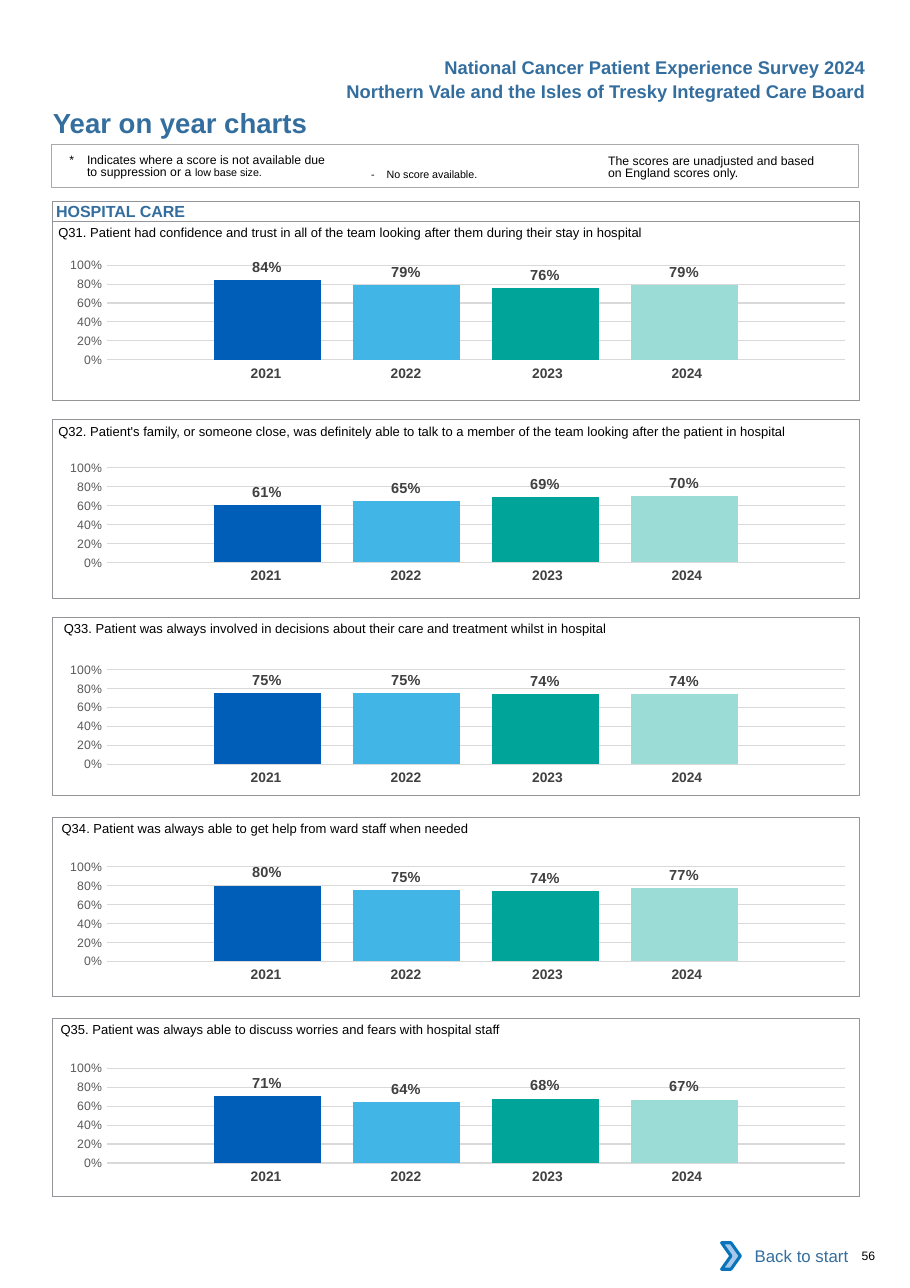
from lxml.etree import SubElement
from pptx import Presentation
from pptx.chart.data import CategoryChartData
from pptx.dml.color import RGBColor
from pptx.enum.chart import XL_CHART_TYPE as ChartType, XL_LABEL_POSITION as LabelPosition
from pptx.enum.chart import XL_TICK_MARK as TickMark
from pptx.enum.shapes import MSO_SHAPE as Shape
from pptx.enum.text import MSO_ANCHOR as Anchor, MSO_AUTO_SIZE as AutoSize, PP_ALIGN as Align
from pptx.oxml.ns import qn
from pptx.util import Inches, Pt

BLACK = RGBColor(0x00, 0x00, 0x00)
WHITE = RGBColor(0xFF, 0xFF, 0xFF)
HEADING = RGBColor(0x33, 0x6E, 0x9F)
FRAME = RGBColor(0x93, 0x95, 0x98)
NOTE_FRAME = RGBColor(0xA9, 0xAA, 0xAD)
YEAR_TEXT = RGBColor(0x41, 0x40, 0x42)
LABEL_TEXT = RGBColor(0x40, 0x40, 0x40)
AXIS_TEXT = RGBColor(0x59, 0x59, 0x59)
GRID = RGBColor(0xD9, 0xD9, 0xD9)
ARROW_FILL = RGBColor(0xA8, 0xC7, 0xE9)
ARROW_LINE = RGBColor(0x0A, 0x74, 0xBB)
YEAR_COLORS = {
    "2021": RGBColor(0x00, 0x5E, 0xB8),
    "2022": RGBColor(0x41, 0xB6, 0xE6),
    "2023": RGBColor(0x00, 0xA4, 0x99),
    "2024": RGBColor(0x9C, 0xDC, 0xD7),
}
YEAR_WIDTHS = (1.27, 1.27, 1.34, 1.27)
YEAR_RIGHT_INSETS = (0, 0, 0.04, 0.12)
PLOT_AREA = {"x": 0.079, "y": 0.145, "w": 0.915, "h": 0.666}
NO_TABLE_STYLE = "{2D5ABB26-0587-4C30-8999-92F81FD0307C}"

QUESTIONS = [
    (2.01, 2.22, 0.53, "Q31. Patient had confidence and trust in all of the team looking after them "
     "during their stay in hospital", (0.84, 0.79, 0.76, 0.79)),
    (3.81, 4.06, 0.53, "Q32. Patient's family, or someone close, was definitely able to talk to a member "
     "of the team looking after the patient in hospital", (0.61, 0.65, 0.69, 0.70)),
    (5.60, 5.89, 0.58, "Q33. Patient was always involved in decisions about their care and treatment "
     "whilst in hospital", (0.75, 0.75, 0.74, 0.74)),
    (7.42, 7.68, 0.56, "Q34. Patient was always able to get help from ward staff when needed",
     (0.80, 0.75, 0.74, 0.77)),
    (9.24, 9.51, 0.55, "Q35. Patient was always able to discuss worries and fears with hospital staff",
     (0.71, 0.64, 0.68, 0.67)),
]


def style_font(font, size, color, bold=False):
    font.name = "Arial"
    font.size = Pt(size)
    font.bold = bold
    font.color.rgb = color


def fill_frame(frame, text, size, color, bold=False, align=Align.LEFT, inset=0.0, anchor=Anchor.TOP):
    frame.text = text
    frame.word_wrap = True
    frame.auto_size = AutoSize.NONE
    frame.vertical_anchor = anchor
    frame.margin_left = frame.margin_right = Inches(inset)
    frame.margin_top = frame.margin_bottom = 0
    paragraph = frame.paragraphs[0]
    paragraph.alignment = align
    for run in paragraph.runs:
        style_font(run.font, size, color, bold)
    return paragraph


def add_text(slide, left, top, width, height, text, size, color=BLACK, bold=False, align=Align.LEFT):
    box = slide.shapes.add_textbox(Inches(left), Inches(top), Inches(width), Inches(height))
    return fill_frame(box.text_frame, text, size, color, bold, align)


def add_box(slide, kind, left, top, width, height, fill=None, line=None, weight=0.5):
    box = slide.shapes.add_shape(kind, Inches(left), Inches(top), Inches(width), Inches(height))
    box.shadow.inherit = False
    if fill is None:
        box.fill.background()
    else:
        box.fill.solid()
        box.fill.fore_color.rgb = fill
    if line is None:
        box.line.fill.background()
    else:
        box.line.color.rgb = line
        box.line.width = Pt(weight)
    return box


def hang(paragraph, indent):
    properties = paragraph._p.get_or_add_pPr()
    properties.set("marL", str(Inches(indent)))
    properties.set("indent", str(-Inches(indent)))


def fix_plot_area(chart):
    plot_area = chart._chartSpace.chart.plotArea
    layout = plot_area.find(qn("c:layout"))
    if layout is None:
        layout = plot_area.makeelement(qn("c:layout"))
        plot_area.insert(0, layout)
    manual = SubElement(layout, qn("c:manualLayout"))
    settings = {"layoutTarget": "inner", "xMode": "edge", "yMode": "edge", **PLOT_AREA}
    for tag, value in settings.items():
        SubElement(manual, qn(f"c:{tag}")).set("val", str(value))


def add_score_chart(slide, top, scores):
    data = CategoryChartData(number_format="0%")
    data.categories = ["1"]
    for year, score in zip(YEAR_COLORS, scores):
        data.add_series(year, [score])
    chart = slide.shapes.add_chart(ChartType.COLUMN_CLUSTERED, Inches(0.39), Inches(top),
                                   Inches(7.32), Inches(1.29), data).chart
    chart.has_legend = chart.has_title = False
    chart.font.name = "Calibri"
    chart.font.size = Pt(10)
    chart.category_axis.visible = False
    fix_plot_area(chart)

    axis = chart.value_axis
    axis.minimum_scale, axis.maximum_scale, axis.major_unit = 0, 1, 0.2
    axis.major_tick_mark = axis.minor_tick_mark = TickMark.NONE
    axis.format.line.fill.background()
    axis.major_gridlines.format.line.color.rgb = GRID
    axis.major_gridlines.format.line.width = Pt(0.75)
    axis.tick_labels.number_format = "0%"
    axis.tick_labels.number_format_is_linked = False
    style_font(axis.tick_labels.font, 8, AXIS_TEXT)

    plot = chart.plots[0]
    plot.gap_width, plot.overlap, plot.vary_by_categories = 200, -30, False
    for series, color in zip(plot.series, YEAR_COLORS.values()):
        series.format.fill.solid()
        series.format.fill.fore_color.rgb = color
        labels = series.data_labels
        labels.show_value = True
        labels.position = LabelPosition.OUTSIDE_END
        labels.number_format = "0%"
        labels.number_format_is_linked = False
        style_font(labels.font, 9.5, LABEL_TEXT, True)


def add_year_table(slide, top):
    table = slide.shapes.add_table(1, len(YEAR_COLORS), Inches(1.73), Inches(top),
                                   Inches(sum(YEAR_WIDTHS)), Inches(0.27)).table
    table.first_row = table.horz_banding = False
    table._tbl.tblPr.find(qn("a:tableStyleId")).text = NO_TABLE_STYLE
    for column, (year, width, inset) in enumerate(zip(YEAR_COLORS, YEAR_WIDTHS, YEAR_RIGHT_INSETS)):
        table.columns[column].width = Inches(width)
        cell = table.cell(0, column)
        cell.fill.background()
        cell.margin_left, cell.margin_right = Inches(0.1), Inches(inset)
        cell.text = year
        paragraph = cell.text_frame.paragraphs[0]
        paragraph.alignment = Align.CENTER
        style_font(paragraph.runs[0].font, 9, YEAR_TEXT, True)


def add_question(slide, frame_top, chart_top, left, question, scores):
    add_year_table(slide, chart_top + 1.05)
    add_score_chart(slide, chart_top, scores)
    add_box(slide, Shape.RECTANGLE, 0.48, frame_top, 7.32, 1.62, line=FRAME)
    add_text(slide, left, frame_top + 0.03, 7.2, 0.15, question, 8.5)


def add_notes_panel(slide):
    add_box(slide, Shape.RECTANGLE, 0.47, 1.31, 7.32, 0.39, line=NOTE_FRAME, weight=0.75)
    suppression = add_text(slide, 0.63, 1.4, 2.35, 0.25,
                           "*\tIndicates where a score is not available due to suppression or a ", 8)
    hang(suppression, 0.16)
    low_base = suppression.add_run()
    low_base.text = "low base size."
    style_font(low_base.font, 7, BLACK)
    unadjusted = add_text(slide, 5.52, 1.41, 1.95, 0.25,
                          "The scores are unadjusted and based on England scores only.", 8)
    for paragraph in (suppression, unadjusted):
        paragraph.line_spacing = Pt(8.1)
    hang(add_text(slide, 3.37, 1.52, 1.5, 0.13, "-\tNo score available.", 7), 0.14)


def main():
    deck = Presentation()
    deck.slide_width, deck.slide_height = Inches(8.26), Inches(11.69)
    slide = deck.slides.add_slide(deck.slide_layouts[5])

    title = slide.shapes.title
    title.left, title.top, title.width, title.height = Inches(0.48), Inches(0.96), Inches(4.5), Inches(0.3)
    fill_frame(title.text_frame, "Year on year charts", 18, HEADING, True)
    headers = ("National Cancer Patient Experience Survey 2024",
               "Northern Vale and the Isles of Tresky Integrated Care Board")
    for row, header in enumerate(headers):
        add_text(slide, 2.66, 0.51 + 0.22 * row, 5.2, 0.2, header, 12, HEADING, True, Align.RIGHT)

    add_notes_panel(slide)
    section = add_box(slide, Shape.RECTANGLE, 0.48, 1.83, 7.32, 0.18, line=FRAME)
    fill_frame(section.text_frame, "HOSPITAL CARE", 10.5, HEADING, True, inset=0.03, anchor=Anchor.MIDDLE)
    for question in QUESTIONS:
        add_question(slide, *question)

    back = add_box(slide, Shape.RECTANGLE, 6.62, 11.19, 1.18, 0.42, fill=WHITE)
    fill_frame(back.text_frame, "Back to start", 11, HEADING, align=Align.RIGHT, inset=0.1, anchor=Anchor.MIDDLE)
    add_box(slide, Shape.CHEVRON, 6.55, 11.28, 0.17, 0.24, ARROW_FILL, ARROW_LINE, 2)
    add_text(slide, 7.82, 11.33, 0.4, 0.13, "56", 8)
    deck.save("out.pptx")


if __name__ == "__main__":
    main()
